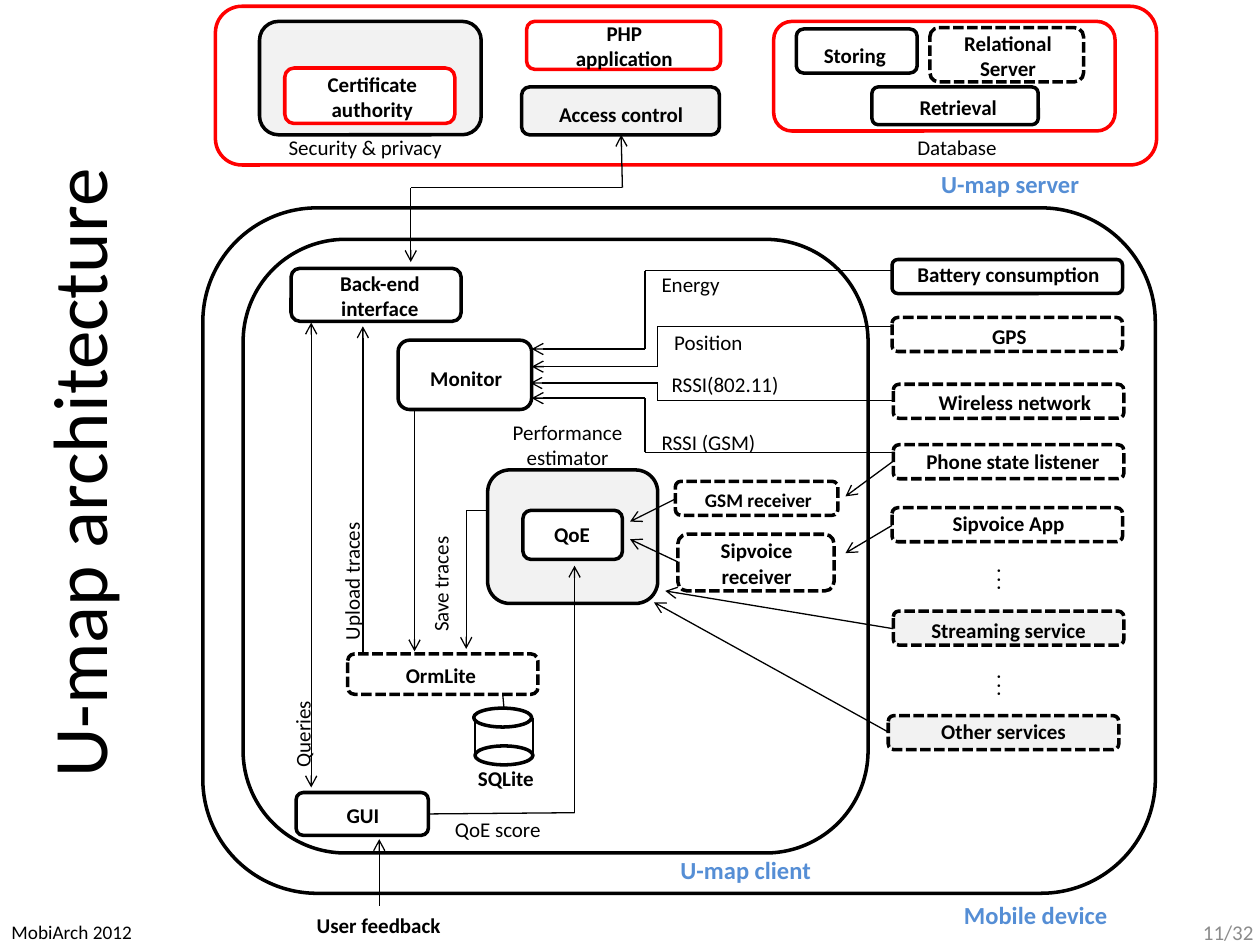
from dataclasses import dataclass
from itertools import pairwise

from pptx import Presentation
from pptx.dml.color import RGBColor
from pptx.enum.dml import MSO_LINE
from pptx.enum.shapes import MSO_CONNECTOR, MSO_SHAPE
from pptx.enum.text import MSO_ANCHOR, PP_ALIGN
from pptx.oxml.ns import qn
from pptx.oxml.xmlchemy import OxmlElement
from pptx.util import Cm, Length, Pt

ROUND, OVAL = MSO_SHAPE.ROUNDED_RECTANGLE, MSO_SHAPE.OVAL
DASH = MSO_LINE.SQUARE_DOT
STRAIGHT = MSO_CONNECTOR.STRAIGHT
TOP, MIDDLE = MSO_ANCHOR.TOP, MSO_ANCHOR.MIDDLE
LEFT, CENTER, RIGHT = PP_ALIGN.LEFT, PP_ALIGN.CENTER, PP_ALIGN.RIGHT


@dataclass(frozen=True)
class Theme:
    font: str = "Calibri"
    ink: str = "000000"
    red: str = "FF0000"
    blue: str = "558ED5"
    gray: str = "8C8C8C"
    pale: str = "F2F2F2"
    white: str = "FFFFFF"
    title: float = 44
    zone: float = 14
    body: float = 12
    small: float = 11
    dots: float = 10
    thick: float = 2
    thin: float = 0.75


T = Theme()


@dataclass(frozen=True)
class Box:
    x: float
    y: float
    w: float
    h: float
    fill: str = ""
    line: str = T.ink
    dash: bool = False
    kind: int = ROUND


@dataclass(frozen=True)
class Label:
    text: str
    x: float
    y: float
    w: float
    h: float = 0.3
    size: float = T.body
    bold: bool = True
    color: str = T.ink
    align: int = CENTER
    turn: float = 0
    anchor: int = TOP


@dataclass(frozen=True)
class Wire:
    points: tuple
    tail: bool = True
    head: bool = False


ROWS = [
    Box(7.08, 2.06, 1.83, 0.27),
    *(Box(x, y, 1.83, 0.27, fill, dash=True) for x, y, fill in (
        (7.08, 2.52, ""), (7.09, 3.05, ""), (7.09, 3.53, ""),
        (7.08, 4.03, ""), (7.09, 4.85, T.pale), (7.05, 5.68, T.pale))),
]
BOXES = [
    Box(1.71, 0.05, 7.47, 1.26, line=T.red),
    Box(2.06, 0.17, 1.76, 0.9, T.pale),
    Box(2.26, 0.54, 1.35, 0.44, T.white, T.red),
    Box(4.18, 0.17, 1.54, 0.38, line=T.red),
    Box(4.14, 0.69, 1.57, 0.38, T.pale),
    Box(6.14, 0.17, 2.71, 0.87, line=T.red),
    Box(6.32, 0.23, 0.96, 0.35),
    Box(7.38, 0.22, 1.22, 0.43, T.white, dash=True),
    Box(6.92, 0.69, 1.32, 0.3),
    Box(1.61, 1.65, 7.56, 5.44),
    Box(1.93, 1.9, 4.96, 4.87),
    Box(2.31, 2.13, 1.35, 0.42),
    Box(3.16, 2.7, 1.06, 0.55),
    Box(3.87, 3.73, 1.35, 1.06, T.pale),
    Box(4.15, 4.05, 0.79, 0.39, T.white),
    Box(5.36, 3.82, 1.29, 0.27, dash=True),
    Box(5.38, 4.24, 1.24, 0.45, dash=True),
    Box(2.76, 5.19, 1.51, 0.32, dash=True),
    Box(2.35, 6.29, 1.05, 0.34),
    Box(3.76, 5.62, 0.46, 0.15, kind=OVAL),
    Box(3.77, 5.92, 0.46, 0.15, kind=OVAL),
    *ROWS,
]
WIRES = [
    Wire(((4.93, 1.07), (4.94, 1.49), (3.26, 1.49), (3.26, 2.08)), head=True),
    Wire(((7.09, 2.15), (5.12, 2.15), (5.12, 2.77), (4.22, 2.77))),
    Wire(((7.09, 2.59), (5.22, 2.59), (5.22, 2.91), (4.22, 2.91))),
    Wire(((7.09, 3.18), (5.22, 3.18), (5.22, 3.04), (4.21, 3.04))),
    Wire(((7.09, 3.59), (5.12, 3.59), (5.12, 3.16), (4.22, 3.16))),
    Wire(((2.47, 2.56), (2.47, 6.25)), head=True),
    Wire(((2.88, 5.19), (2.88, 2.59))),
    Wire(((3.29, 3.25), (3.29, 5.17))),
    Wire(((3.87, 4.05), (3.7, 4.05), (3.7, 5.15))),
    Wire(((3.4, 6.46), (4.56, 6.45), (4.56, 4.49))),
    Wire(((3.01, 7.19), (3.01, 6.66))),
    Wire(((5.36, 3.96), (5, 4.14))),
    Wire(((5.38, 4.46), (5, 4.28))),
    Wire(((7.09, 3.66), (6.71, 3.94))),
    Wire(((7.08, 4.17), (6.71, 4.39))),
    Wire(((7.09, 4.99), (5.28, 4.69))),
    Wire(((7.05, 5.81), (5.19, 4.78))),
    Wire(((3.99, 5.51), (4, 5.62)), tail=False),
    *(Wire(((x, 5.7), (x, 5.98)), tail=False) for x in (3.77, 4.23)),
]
LABELS = [
    Label("U-map architecture", -2.62, 3.13, 6.45, 1.25, T.title, False,
          turn=270, anchor=MIDDLE),
    Label("MobiArch 2012", 0, 7.29, 1.93, 0.21, T.small, False,
          align=LEFT, anchor=MIDDLE),
    Label("11/32", 9.41, 7.29, 0.63, 0.21, T.body, False, T.gray, RIGHT,
          anchor=MIDDLE),
    Label("Certificate authority", 2.4, 0.52, 1.11, 0.49),
    Label("PHP\napplication", 4.26, 0.11, 1.39, 0.49),
    Label("Access control", 4.22, 0.76, 1.42),
    Label("Storing", 6.37, 0.29, 0.83),
    Label("Relational\nServer", 7.36, 0.19, 1.28, 0.49),
    Label("Retrieval", 7.13, 0.7, 0.95),
    Label("Battery consumption", 7.08, 2.03, 1.85),
    Label("GPS", 7.77, 2.52, 0.48),
    Label("Wireless network", 7.25, 3.04, 1.61),
    Label("Phone state listener", 7.15, 3.51, 1.78),
    Label("Sipvoice App", 7.39, 4, 1.23),
    Label("Streaming service", 7.15, 4.85, 1.71),
    Label("Other services", 7.24, 5.65, 1.45),
    Label("Back-end interface", 2.32, 2.1, 1.39, 0.5),
    Label("Monitor", 3.26, 2.85, 0.88),
    Label("QoE", 4.27, 4.09, 0.54),
    Label("GSM receiver", 5.39, 3.83, 1.26, size=T.small),
    Label("Sipvoice receiver", 5.58, 4.22, 0.85, 0.5),
    Label("OrmLite", 2.93, 5.21, 1.14),
    Label("SQLite", 3.66, 6.03, 0.71),
    Label("GUI", 2.6, 6.32, 0.56),
    Label("User feedback", 2.34, 7.19, 1.33),
    Label("Performance\nestimator", 3.89, 3.28, 1.23, 0.5, bold=False),
    *(Label(text, x, y, w, bold=False, align=LEFT) for text, x, y, w in (
        ("Security & privacy", 2.2, 1.02, 1.59), ("Database", 7.19, 1.02, 0.94),
        ("Energy", 5.16, 2.11, 1.23), ("Position", 5.26, 2.57, 1.39),
        ("RSSI(802.11)", 5.24, 2.9, 1.27), ("RSSI (GSM)", 5.16, 3.36, 1.17),
        ("QoE score", 3.52, 6.43, 0.98))),
    *(Label(text, x, y, w, bold=False, align=LEFT, turn=270) for text, x, y, w in (
        ("Save traces", 2.95, 4.41, 1.09), ("Upload traces", 2.15, 4.38, 1.28),
        ("Queries", 2.01, 5.64, 0.78))),
    *(Label(text, x, y, w, 0.34, T.zone, color=T.blue, align=LEFT)
      for text, x, y, w in (("U-map server", 7.38, 1.29, 1.54),
                            ("U-map client", 5.31, 6.74, 1.46),
                            ("Mobile device", 7.56, 7.09, 1.52))),
    *(Label(". . .", 7.67, y, 0.43, 0.27, T.dots, align=LEFT, turn=270)
      for y in (4.43, 5.27)),
]


def inch(value: float) -> Length:
    return Cm(value * 2.54)


def rgb(color: str) -> RGBColor:
    return RGBColor.from_string(color)


def draw_box(shapes, box: Box) -> None:
    shape = shapes.add_shape(box.kind, *map(inch, (box.x, box.y, box.w, box.h)))
    shape.shadow.inherit = False
    if box.fill:
        shape.fill.solid()
        shape.fill.fore_color.rgb = rgb(box.fill)
    else:
        shape.fill.background()
    shape.line.color.rgb = rgb(box.line)
    shape.line.width = Pt(T.thick)
    if box.dash:
        shape.line.dash_style = DASH


def draw_wire(shapes, wire: Wire) -> None:
    parts = []
    for start, end in pairwise(wire.points):
        part = shapes.add_connector(STRAIGHT, *map(inch, (*start, *end)))
        part.line.color.rgb = rgb(T.ink)
        part.line.width = Pt(T.thin)
        part._element.spPr.append(OxmlElement("a:effectLst"))
        parts.append(part)
    for part, tag, shown in ((parts[0], "a:headEnd", wire.head),
                             (parts[-1], "a:tailEnd", wire.tail)):
        if shown:
            tip = OxmlElement(tag)
            tip.set("type", "arrow")
            part._element.spPr.find(qn("a:ln")).append(tip)


def draw_label(shapes, label: Label) -> None:
    area = shapes.add_textbox(*map(inch, (label.x, label.y, label.w, label.h)))
    area.rotation = label.turn
    frame = area.text_frame
    frame.word_wrap = True
    frame.vertical_anchor = label.anchor
    frame.margin_left = frame.margin_right = Cm(0.23)
    frame.text = label.text
    for para in frame.paragraphs:
        para.alignment = label.align
        for run in para.runs:
            run.font.name = T.font
            run.font.size = Pt(label.size)
            run.font.bold = label.bold
            run.font.color.rgb = rgb(label.color)


def main() -> None:
    deck = Presentation()
    deck.slide_width, deck.slide_height = Cm(25.4), Cm(19.05)
    shapes = deck.slides.add_slide(deck.slide_layouts[6]).shapes
    for items, draw in ((BOXES, draw_box), (WIRES, draw_wire), (LABELS, draw_label)):
        for item in items:
            draw(shapes, item)
    deck.save("out.pptx")


if __name__ == "__main__":
    main()
